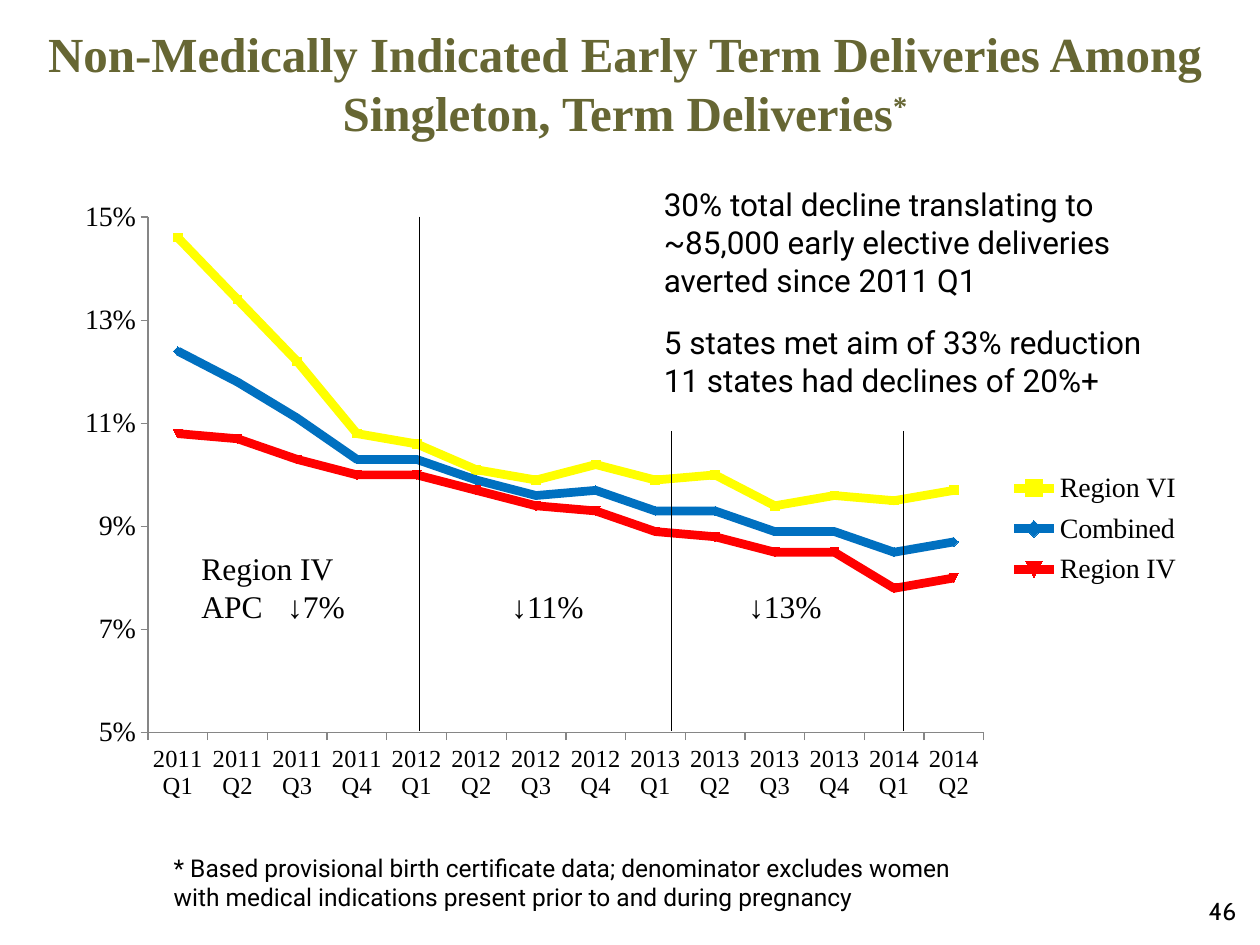
from lxml import etree
from pptx import Presentation
from pptx.chart.data import CategoryChartData
from pptx.dml.color import RGBColor
from pptx.enum.chart import XL_CHART_TYPE, XL_LEGEND_POSITION, XL_TICK_MARK
from pptx.enum.shapes import MSO_CONNECTOR, MSO_SHAPE
from pptx.enum.text import MSO_ANCHOR, PP_ALIGN
from pptx.oxml.ns import qn
from pptx.util import Inches, Pt

LINE_CHART = XL_CHART_TYPE.LINE
LEGEND_RIGHT = XL_LEGEND_POSITION.RIGHT
TICK_OUTSIDE = XL_TICK_MARK.OUTSIDE
STRAIGHT = MSO_CONNECTOR.STRAIGHT
RECTANGLE = MSO_SHAPE.RECTANGLE
TOP, MIDDLE = MSO_ANCHOR.TOP, MSO_ANCHOR.MIDDLE
LEFT, CENTER, RIGHT = PP_ALIGN.LEFT, PP_ALIGN.CENTER, PP_ALIGN.RIGHT

BLACK = RGBColor(0x00, 0x00, 0x00)
WHITE = RGBColor(0xFF, 0xFF, 0xFF)
OLIVE = RGBColor(0x66, 0x66, 0x33)
GRAY = RGBColor(0x86, 0x86, 0x86)
YELLOW = RGBColor(0xFF, 0xFF, 0x00)
BLUE = RGBColor(0x00, 0x70, 0xC0)
RED = RGBColor(0xFF, 0x00, 0x00)

SERIF, SANS, NUMBER_FONT = "Times New Roman", "Roboto", "Cabin"
SLIDE_WIDTH, SLIDE_HEIGHT = Inches(10), Inches(7.5)

QUARTERS = [f"{2011 + i // 4} Q{i % 4 + 1}" for i in range(14)]
SERIES = [
    ("Region VI", YELLOW, (14.6, 13.4, 12.2, 10.8, 10.6, 10.1, 9.9,
                           10.2, 9.9, 10, 9.4, 9.6, 9.5, 9.7)),
    ("Combined", BLUE, (12.4, 11.8, 11.1, 10.3, 10.3, 9.9, 9.6,
                        9.7, 9.3, 9.3, 8.9, 8.9, 8.5, 8.7)),
    ("Region IV", RED, (10.8, 10.7, 10.3, 10, 10, 9.7, 9.4,
                        9.3, 8.9, 8.8, 8.5, 8.5, 7.8, 8)),
]


def across(percent):
    """Percent of the slide's width."""
    return round(SLIDE_WIDTH * percent / 100)


def down(percent):
    """Percent of the slide's height."""
    return round(SLIDE_HEIGHT * percent / 100)


def place(left, top, width, height):
    return across(left), down(top), across(width), down(height)


def set_format(target, **values):
    """Set font attributes; color goes to the nested color object."""
    for name, value in values.items():
        if name == "color":
            target.color.rgb = value
        else:
            setattr(target, name, value)


def write(shape, lines, size, font, color=BLACK, bold=False,
          align=LEFT, anchor=TOP, gaps=None, tabs=()):
    """Fill a shape with paragraphs; gaps maps line index to space before."""
    frame = shape.text_frame
    frame.word_wrap = True
    frame.vertical_anchor = anchor
    for index, line in enumerate(lines):
        paragraph = frame.paragraphs[0] if index == 0 else frame.add_paragraph()
        paragraph.alignment = align
        if gaps and index in gaps:
            paragraph.space_before = Pt(gaps[index])
        if tabs:
            tab_list = etree.SubElement(paragraph._p.get_or_add_pPr(), qn("a:tabLst"))
            for position in tabs:
                etree.SubElement(tab_list, qn("a:tab"),
                                 pos=str(across(position)), algn="l")
        run = paragraph.add_run()
        run.text = line
        set_format(run.font, size=Pt(size), name=font, color=color, bold=bold)
    return frame


def add_text(slide, box, lines, size, font, **options):
    return write(slide.shapes.add_textbox(*place(*box)), lines, size, font, **options)


def add_title(slide):
    style = {"size": 28, "font": SERIF, "color": OLIVE, "bold": True}
    frame = add_text(
        slide, (1.7, 0.4, 95.8, 16.67),
        ["Non-Medically Indicated Early Term Deliveries Among "
         "Singleton, Term Deliveries"],
        align=CENTER, anchor=MIDDLE, **style)
    star = frame.paragraphs[0].add_run()
    star.text = "*"
    set_format(star.font, size=Pt(28), name=SERIF, color=OLIVE, bold=True)
    star._r.get_or_add_rPr().set("baseline", "30000")


def set_layout(parent, index, inner, **shares):
    """Fix a chart part at shares of the chart's size."""
    for old in parent.findall(qn("c:layout")):
        parent.remove(old)
    layout = etree.Element(qn("c:layout"))
    parent.insert(index, layout)
    manual = etree.SubElement(layout, qn("c:manualLayout"))
    settings = {"layoutTarget": "inner"} if inner else {}
    settings.update(xMode="edge", yMode="edge", **shares)
    for name, value in settings.items():
        etree.SubElement(manual, qn(f"c:{name}"), val=str(value))


def format_axis(axis, size):
    axis.has_major_gridlines = False
    axis.major_tick_mark = TICK_OUTSIDE
    axis.format.line.color.rgb = GRAY
    set_format(axis.tick_labels.font, size=Pt(size), name=SERIF, color=BLACK)


def add_delivery_chart(slide):
    data = CategoryChartData(number_format="0%")
    data.categories = QUARTERS
    for name, _, percents in SERIES:
        data.add_series(name, [round(percent / 100, 3) for percent in percents])
    chart = slide.shapes.add_chart(LINE_CHART, *place(5, 20, 90, 66), data).chart
    chart.has_title = False
    set_format(chart.font, size=Pt(10), name=SERIF, color=BLACK)

    plot = chart.plots[0]
    plot.vary_by_categories = False
    for series, (_, color, _) in zip(plot.series, SERIES):
        series.smooth = False
        series.marker.style = None
        series.format.line.width = Pt(5)
        series.format.line.color.rgb = color

    format_axis(chart.category_axis, 14)
    value_axis = chart.value_axis
    format_axis(value_axis, 16)
    set_format(value_axis, minimum_scale=0.05, maximum_scale=0.15, major_unit=0.02)
    set_format(value_axis.tick_labels, number_format="0%",
               number_format_is_linked=False)

    chart.has_legend = True
    legend = chart.legend
    set_format(legend, position=LEGEND_RIGHT, include_in_layout=False)
    set_format(legend.font, size=Pt(16), name=SERIF, color=BLACK)
    plot_area = chart._chartSpace.find(f".//{qn('c:plotArea')}")
    set_layout(plot_area, 0, True, x=0.075, y=0.045, w=0.737, h=0.827)
    set_layout(legend._element, 1, False, x=0.83, y=0.44, w=0.16, h=0.21)


def add_findings(slide):
    panel = slide.shapes.add_shape(RECTANGLE, *place(51.7, 18.93, 40, 24.27))
    panel.shadow.inherit = False
    panel.fill.solid()
    panel.fill.fore_color.rgb = WHITE
    panel.line.fill.background()
    write(panel,
          ["30% total decline translating to ~85,000 early elective "
           "deliveries averted since 2011 Q1",
           "5 states met aim of 33% reduction",
           "11 states had declines of 20%+"],
          18, SANS, gaps={1: 14})


def add_period_line(slide, x, top):
    line = slide.shapes.add_connector(
        STRAIGHT, across(x), down(top), across(x), down(77.33))
    line.line.color.rgb = BLACK
    line.line.width = Pt(0.75)
    etree.SubElement(line._element.spPr, qn("a:effectLst"))


def main():
    presentation = Presentation()
    presentation.slide_width = SLIDE_WIDTH
    presentation.slide_height = SLIDE_HEIGHT
    slide = presentation.slides.add_slide(presentation.slide_layouts[6])

    # Chart and title
    add_delivery_chart(slide)
    add_title(slide)

    # Footnote and findings
    add_text(slide, (12.8, 89.6, 85, 7.6),
             ["* Based provisional birth certificate data; denominator excludes women",
              "with medical indications present prior to and during pregnancy"],
             14, SANS)
    add_findings(slide)

    # Period dividers with the annual change in each period
    for x, top in ((33.3, 22.93), (53.3, 45.6), (71.7, 45.6)):
        add_period_line(slide, x, top)
    add_text(slide, (15, 57.47, 69.2, 9.47),
             ["Region IV", "APC\t↓7%\t↓11%\t↓13%"],
             18, SERIF, tabs=(6.8, 24.6, 43.4))

    # Slide number
    add_text(slide, (75.8, 94.13, 23.3, 5.8), ["46"], 14, NUMBER_FONT, align=RIGHT)

    presentation.save("out.pptx")


if __name__ == "__main__":
    main()
